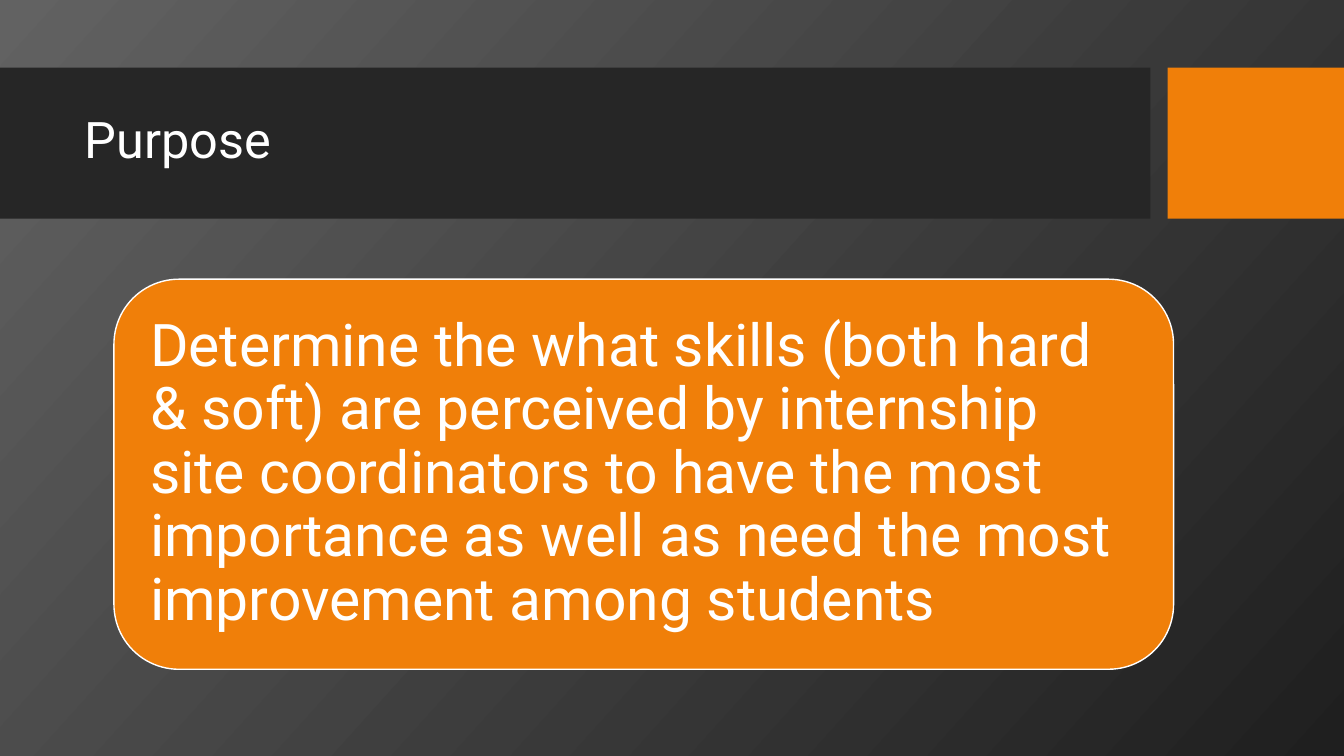
from dataclasses import dataclass

from pptx import Presentation
from pptx.dml.color import RGBColor
from pptx.enum.shapes import MSO_SHAPE
from pptx.enum.text import MSO_ANCHOR, MSO_AUTO_SIZE, PP_ALIGN
from pptx.util import Inches, Pt

RECT = MSO_SHAPE.RECTANGLE
ROUND = MSO_SHAPE.ROUNDED_RECTANGLE
MIDDLE = MSO_ANCHOR.MIDDLE
LEFT = PP_ALIGN.LEFT
FIXED = MSO_AUTO_SIZE.NONE

WIDE, HIGH = 13.33, 7.5
BAND_TOP, BAND_HIGH = 0.67, 1.5
BAND_WIDE, TAB_WIDE = 11.41, 1.75
BODY_WIDE = 10.51


@dataclass(frozen=True)
class Theme:
    font: str = "Roboto"
    light: str = "FFFFFF"
    band: str = "262626"
    accent: str = "F07F09"
    fade: tuple = ("626262", "1F1F1F")
    angle: int = 318
    head: int = 36
    body: int = 42


THEME = Theme()


def tint(code):
    return RGBColor.from_string(code)


def place(shape, box):
    shape.left, shape.top, shape.width, shape.height = map(Inches, box)


def shade(slide):
    fill = slide.background.fill
    fill.gradient()
    fill.gradient_angle = THEME.angle
    for stop, code in zip(fill.gradient_stops, THEME.fade):
        stop.color.rgb = tint(code)


def panel(slide, kind, box, color, edge=None):
    shape = slide.shapes.add_shape(kind, *map(Inches, box))
    shape.shadow.inherit = False
    shape.fill.solid()
    shape.fill.fore_color.rgb = tint(color)
    if edge:
        shape.line.color.rgb = tint(edge)
        shape.line.width = Pt(1)
    else:
        shape.line.fill.background()
    return shape


def write(shape, text, size, inset):
    frame = shape.text_frame
    frame.text = text
    frame.word_wrap = True
    frame.auto_size = FIXED
    frame.vertical_anchor = MIDDLE
    side, edge = map(Inches, inset)
    frame.margin_left = frame.margin_right = side
    frame.margin_top = frame.margin_bottom = edge
    para = frame.paragraphs[0]
    para.alignment = LEFT
    para.line_spacing = 0.9
    para.font.name = THEME.font
    para.font.size = Pt(size)
    para.font.color.rgb = tint(THEME.light)


def head(slide, text):
    panel(slide, RECT, (0, BAND_TOP, BAND_WIDE, BAND_HIGH), THEME.band)
    panel(slide, RECT, (WIDE - TAB_WIDE, BAND_TOP, TAB_WIDE, BAND_HIGH),
          THEME.accent)
    title = slide.shapes.title
    place(title, (0.74, 0.82, BODY_WIDE, 1.18))
    write(title, text, THEME.head, (0.1, 0.05))
    slide.shapes._spTree.append(title._element)


def card(slide, text):
    shape = panel(slide, ROUND, (1.13, 2.77, BODY_WIDE, 3.87),
                  THEME.accent, THEME.light)
    write(shape, text, THEME.body, (0.17, 0.17))


def main():
    deck = Presentation()
    deck.slide_width, deck.slide_height = Inches(WIDE), Inches(HIGH)
    slide = deck.slides.add_slide(deck.slide_layouts.get_by_name("Title Only"))
    shade(slide)
    head(slide, "Purpose")
    card(slide, "Determine the what skills (both hard & soft) are perceived "
                "by internship site coordinators to have the most importance "
                "as well as need the most improvement among students")
    deck.save("out.pptx")


if __name__ == "__main__":
    main()
